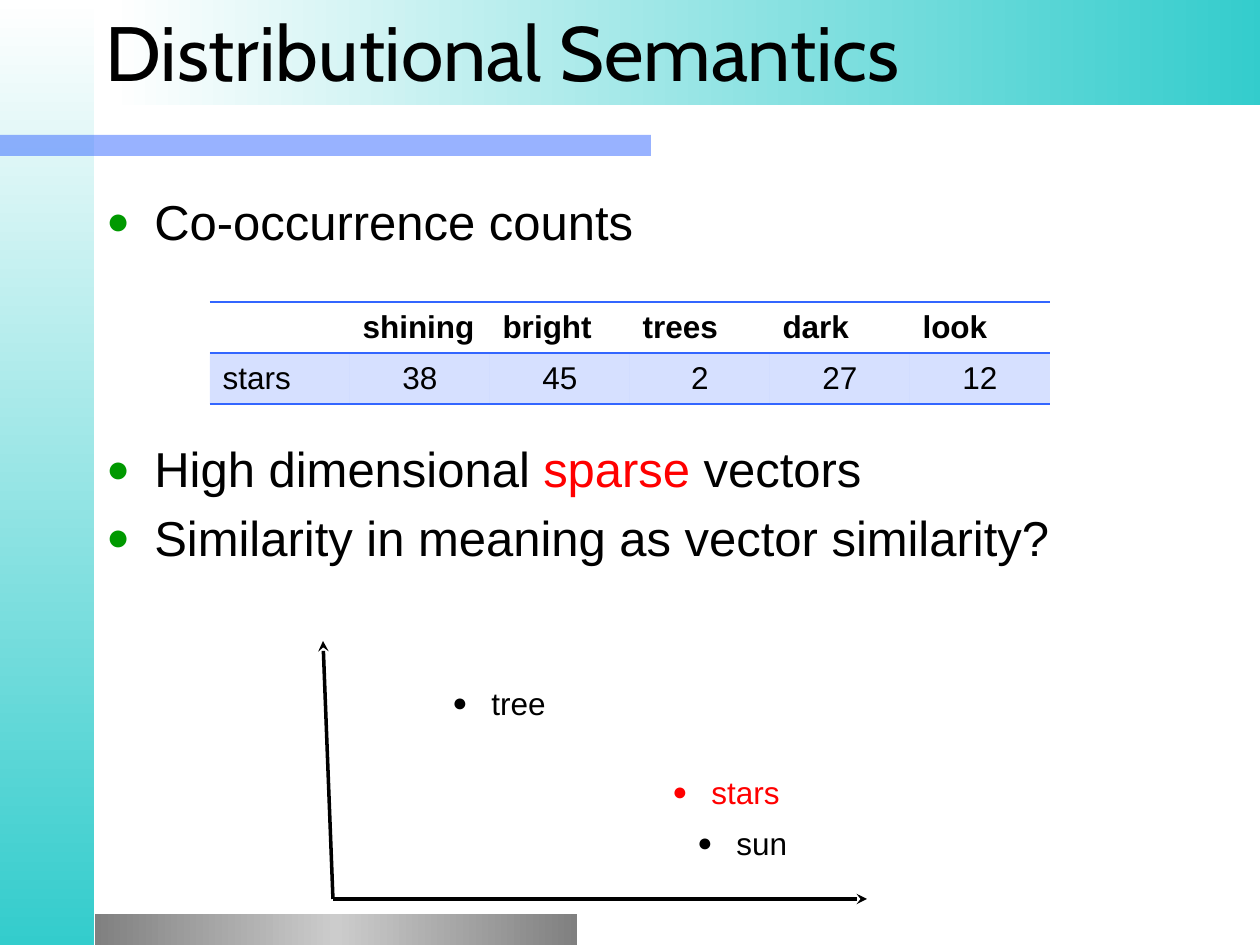
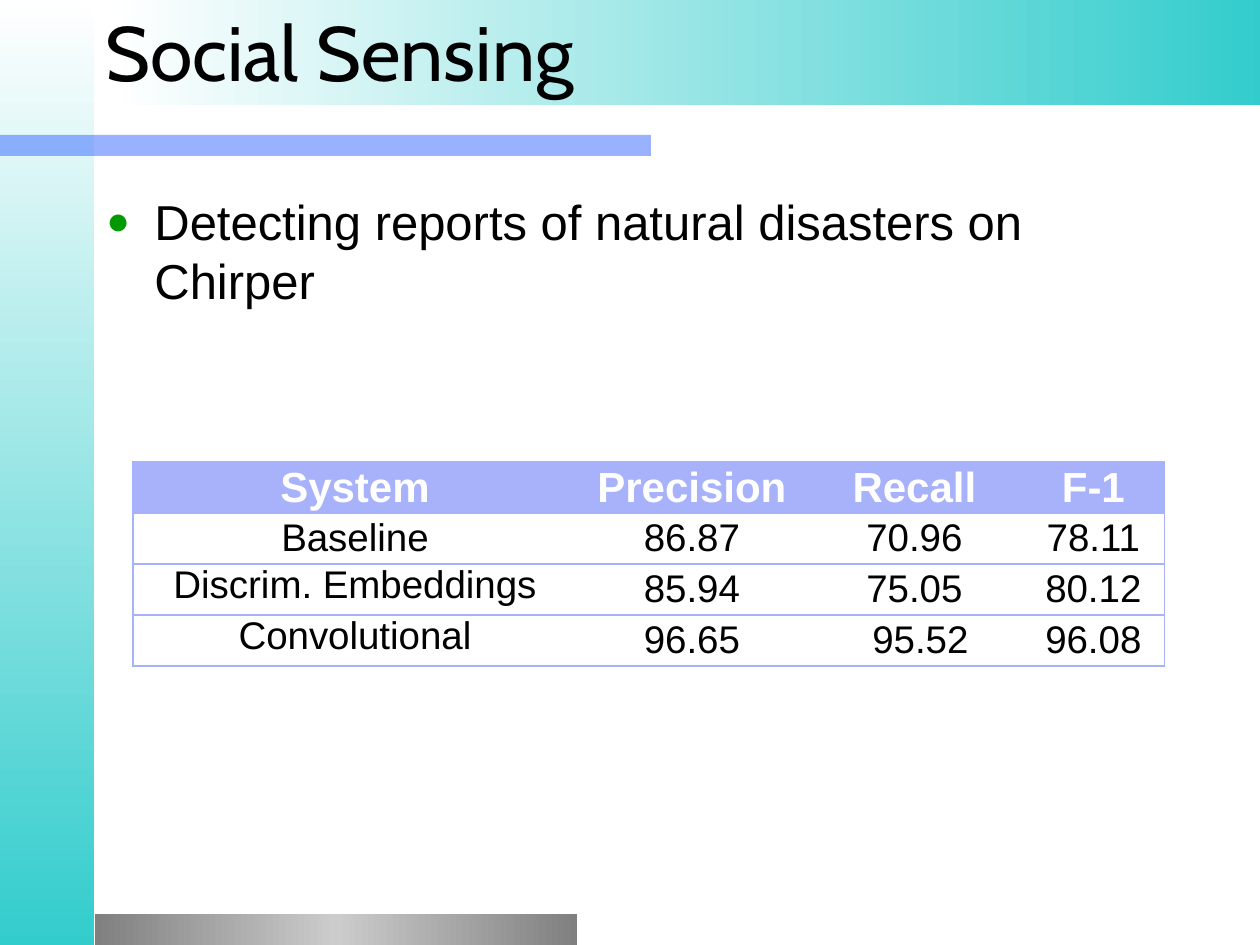
import pptx
import pptx.dml.color
import pptx.enum.shapes
import pptx.enum.text
import pptx.oxml.ns
import pptx.util
from lxml import etree

EMU_PER_PX = 914400 / 126
TEAL, BLUE, LAVENDER = "33CCCC", "3366FF", "A7B2FB"
BLACK, WHITE, RED, GREEN = "000000", "FFFFFF", "FF0000", "009900"
GREY_EDGE, GREY_MIDDLE = "808080", "CCCCCC"
PLAIN_TABLE = "{2D5ABB26-0587-4C30-8999-92F81FD0307C}"
MIDDLE = pptx.enum.text.MSO_ANCHOR.MIDDLE
TOP = pptx.enum.text.MSO_ANCHOR.TOP
CENTER = pptx.enum.text.PP_ALIGN.CENTER


def px(length):
    return pptx.util.Emu(round(length * EMU_PER_PX))


def colour(hex_text):
    return pptx.dml.color.RGBColor.from_string(hex_text)


def child(parent, tag, **attributes):
    values = {name: str(value) for name, value in attributes.items()}
    return etree.SubElement(parent, pptx.oxml.ns.qn("a:" + tag), values)


def assign(target, values):
    for name, value in values.items():
        setattr(target, name, value)


def paint(fill, holder, hex_text, opacity=100):
    fill.solid()
    fill.fore_color.rgb = colour(hex_text)
    if opacity < 100:
        tint = holder.find(".//" + pptx.oxml.ns.qn("a:srgbClr"))
        child(tint, "alpha", val=opacity * 1000)


class SlideBuilder:
    title_font = {"name": "Cabin", "size": pptx.util.Pt(44)}
    body_font = {"name": "Arial", "size": pptx.util.Pt(28)}
    small_font = {"name": "Arial", "size": pptx.util.Pt(18)}

    def __init__(self):
        self.deck = pptx.Presentation()
        assign(self.deck, {"slide_width": px(1260), "slide_height": px(945)})
        self.page = None

    def start_page(self, title):
        self.page = self.deck.slides.add_slide(self.deck.slide_layouts[6])
        self.gradient_band(0, 0, 94, 945, [WHITE, TEAL], 90)
        bar = self.band(0, 135, 651, 21)
        paint(bar.fill, bar._element.spPr, BLUE, 50)
        self.gradient_band(95, 914, 482, 31, [GREY_EDGE, GREY_MIDDLE, GREY_EDGE], 0)
        self.gradient_band(111, 0, 1154, 105, [WHITE, TEAL], 0)
        frame = self.text_frame(93, 0, 1071, 101)
        frame.vertical_anchor = MIDDLE
        self.span(frame.paragraphs[0], title, self.title_font)

    def band(self, left, top, width, height):
        box = self.page.shapes.add_shape(
            pptx.enum.shapes.MSO_SHAPE.RECTANGLE, px(left), px(top), px(width), px(height))
        box.shadow.inherit = False
        box.line.fill.background()
        return box

    def gradient_band(self, left, top, width, height, stops, angle):
        properties = self.band(left, top, width, height)._element.spPr
        gradient = etree.Element(pptx.oxml.ns.qn("a:gradFill"), rotWithShape="1")
        properties.find(pptx.oxml.ns.qn("a:prstGeom")).addnext(gradient)
        stop_list = child(gradient, "gsLst")
        for index, stop in enumerate(stops):
            point = child(stop_list, "gs", pos=index * 100000 // (len(stops) - 1))
            child(point, "srgbClr", val=colour(stop))
        child(gradient, "lin", ang=angle * 60000, scaled=0)

    def text_frame(self, left, top, width, height):
        box = self.page.shapes.add_textbox(px(left), px(top), px(width), px(height))
        box.text_frame.word_wrap = True
        return box.text_frame

    def span(self, para, text, font, hex_text=BLACK):
        span = para.add_run()
        span.text = text
        assign(span.font, font)
        span.font.color.rgb = colour(hex_text)

    def bullet(self, para, indent, hex_text, spaced=False):
        properties = para._p.get_or_add_pPr()
        properties.set("marL", str(px(indent)))
        properties.set("indent", str(-px(indent)))
        if spaced:
            child(child(properties, "spcBef"), "spcPct", val=20000)
        child(child(properties, "buClr"), "srgbClr", val=colour(hex_text))
        child(properties, "buSzPct", val=80000)
        child(properties, "buFont", typeface="Arial")
        child(properties, "buChar", char="●")

    def bullet_list(self, width, height, items):
        frame = self.text_frame(94, 185, width, height)
        for index, (gap, spans) in enumerate(items):
            para = frame.add_paragraph() if index else frame.paragraphs[0]
            self.bullet(para, 48, GREEN, spaced=True)
            if gap:
                para.space_before = pptx.util.Pt(gap)
            for text, hex_text in spans:
                self.span(para, text, self.body_font, hex_text)

    def point_label(self, left, top, width, text, hex_text=BLACK):
        para = self.text_frame(left, top, width, 50).paragraphs[0]
        self.bullet(para, 39, hex_text)
        self.span(para, text, self.small_font, hex_text)

    def axis(self, start, end):
        line = self.page.shapes.add_connector(
            pptx.enum.shapes.MSO_CONNECTOR.STRAIGHT, *map(px, start + end))
        line.line.color.rgb = colour(BLACK)
        line.line.width = pptx.util.Pt(2)
        child(line.line._ln, "tailEnd", type="stealth")
        child(line._element.spPr, "effectLst")

    def table(self, left, top, widths, row_height, row_count):
        holder = self.page.shapes.add_table(
            row_count, len(widths), px(left), px(top), px(sum(widths)), px(row_height * row_count))
        table = holder.table
        assign(table, {"first_row": False, "horz_banding": False})
        table._tbl.tblPr.find(pptx.oxml.ns.qn("a:tableStyleId")).text = PLAIN_TABLE
        for column, width in zip(table.columns, widths):
            column.width = px(width)
        for row in table.rows:
            row.height = px(row_height)
        return table

    def cell(self, cell, text, font, hex_text, edges, line, fill=None, opacity=100):
        properties = cell._tc.get_or_add_tcPr()
        line_colour, points = line
        for edge in "LRTB":
            if edge in edges:
                border = child(properties, "ln" + edge, w=pptx.util.Pt(points))
                child(child(border, "solidFill"), "srgbClr", val=colour(line_colour))
            else:
                child(child(properties, "ln" + edge, w=0), "noFill")
        if fill:
            cell.fill.solid()
            cell.fill.fore_color.rgb = colour(fill)
            tint = properties.find(pptx.oxml.ns.qn("a:solidFill"))[0]
            if opacity < 100:
                child(tint, "alpha", val=opacity * 1000)
        else:
            cell.fill.background()
        cell.vertical_anchor = MIDDLE
        para = cell.text_frame.paragraphs[0]
        if text:
            self.span(para, text, font, hex_text)
        return para

    def count_table(self, rows):
        table = self.table(210, 302, [140] * 6, 51, len(rows))
        for r, row in enumerate(rows):
            look = {"fill": BLUE, "opacity": 20} if r else {}
            font = {**self.small_font, "bold": r == 0}
            for c, text in enumerate(row):
                para = self.cell(table.cell(r, c), text, font, BLACK, "TB", (BLUE, 1), **look)
                if r and c:
                    para.alignment = CENTER

    def score_table(self, rows):
        table = self.table(133, 462, [424, 250, 195, 163], 51, len(rows))
        inset = {"margin_left": px(5), "margin_right": px(5), "margin_top": 0, "margin_bottom": 0}
        for r, row in enumerate(rows):
            font = {"name": "Arial", "size": pptx.util.Pt(22 if r else 24), "bold": r == 0}
            for c, text in enumerate(row):
                edges = "TB" + ("L" if c == 0 else "") + ("R" if c == len(row) - 1 else "")
                cell = table.cell(r, c)
                para = self.cell(cell, text, font, BLACK if r else WHITE, edges,
                                 (LAVENDER, 0.75), WHITE if r else LAVENDER)
                assign(cell, inset)
                if c == 0 and r > 1:
                    cell.vertical_anchor = TOP
                para.alignment = CENTER
                indent = 32 if text == "95.52" else 20
                para._p.get_or_add_pPr().set("indent", str(px(indent)))


def distributional_semantics(builder):
    builder.start_page("Distributional Semantics")
    builder.bullet_list(1071, 716, [
        (None, [("Co-occurrence counts", BLACK)]),
        (108, [("High dimensional ", BLACK), ("sparse", RED), (" vectors", BLACK)]),
        (None, [("Similarity in meaning as vector similarity?", BLACK)]),
    ])
    builder.count_table([
        ["", "shining", "bright", "trees", "dark", "look"],
        ["stars", "38", "45", "2", "27", "12"],
    ])
    origin = (333, 899)
    for end in [(323, 641), (867, 899)]:
        builder.axis(origin, end)
    builder.point_label(440, 678, 141, "tree")
    builder.point_label(685, 818, 134, "sun")
    builder.point_label(660, 767, 159, "stars", RED)


def social_sensing(builder):
    builder.start_page("Social Sensing")
    builder.bullet_list(1051, 218, [
        (None, [("Detecting reports of natural disasters on Chirper", BLACK)]),
    ])
    builder.score_table([
        ["System", "Precision", "Recall", "F-1"],
        ["Baseline", "86.87", "70.96", "78.11"],
        ["Discrim. Embeddings", "85.94", "75.05", "80.12"],
        ["Convolutional", "96.65", "95.52", "96.08"],
    ])


def main():
    builder = SlideBuilder()
    distributional_semantics(builder)
    social_sensing(builder)
    builder.deck.save("out.pptx")


if __name__ == "__main__":
    main()
